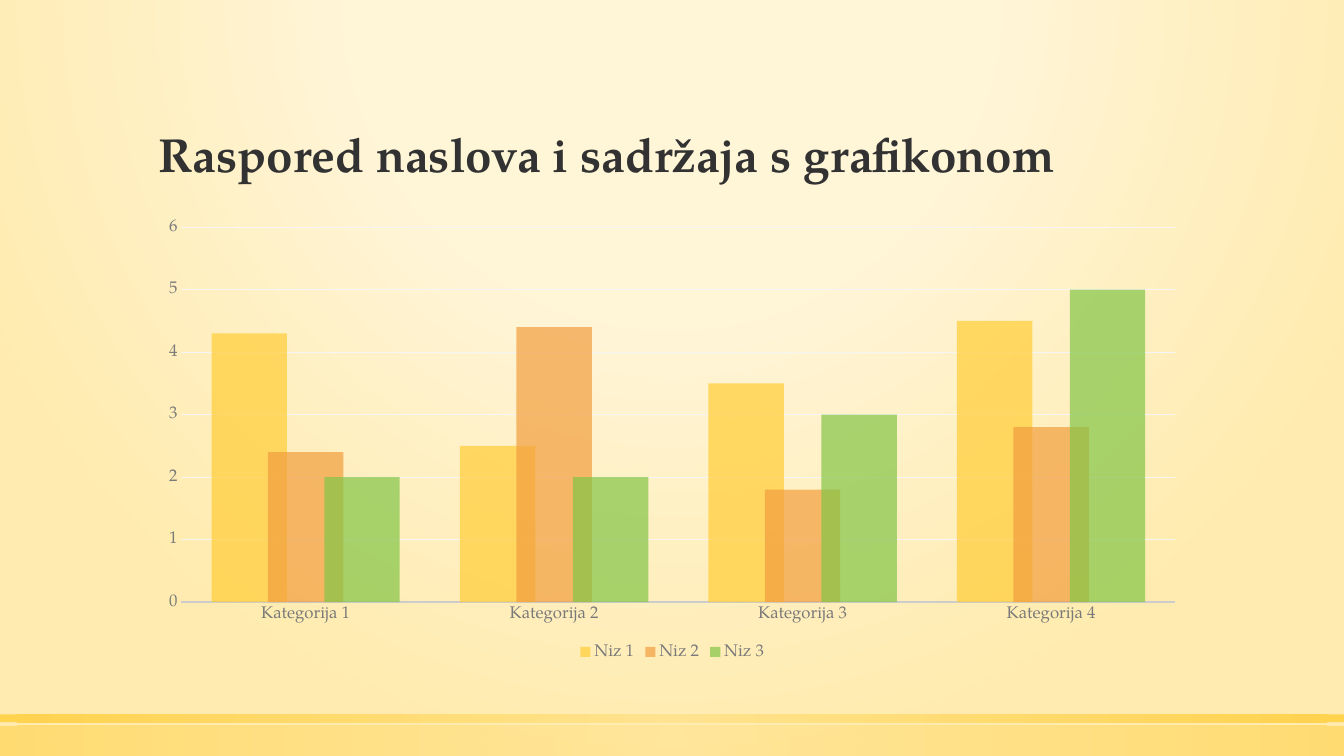
from pptx import Presentation
from pptx.chart.data import CategoryChartData
from pptx.dml.color import RGBColor
from pptx.enum.chart import XL_CHART_TYPE, XL_LEGEND_POSITION, XL_TICK_MARK
from pptx.enum.shapes import MSO_SHAPE
from pptx.enum.text import MSO_ANCHOR, MSO_AUTO_SIZE, PP_ALIGN
from pptx.oxml import parse_xml
from pptx.oxml.ns import nsdecls, qn
from pptx.util import Cm, Pt

FONT = "TeX Gyre Pagella"
SLIDE_WIDTH, SLIDE_HEIGHT = Cm(33.87), Cm(19.05)
MARGIN, CONTENT_WIDTH = Cm(3.73), Cm(26.42)
COLORS = {
    "cream": "FFF5D7", "sand": "FFEBAF", "light_gold": "FFE186",
    "gold": "FFCD36", "orange": "F29E3E", "green": "83C546",
    "title": "323232", "label": "7A7A7A", "axis": "CCCCCC", "grid": "F5F5F5",
}
CATEGORIES = [f"Kategorija {number}" for number in range(1, 5)]
SERIES = [
    ("Niz 1", "gold", (4.3, 2.5, 3.5, 4.5)),
    ("Niz 2", "orange", (2.4, 4.4, 1.8, 2.8)),
    ("Niz 3", "green", (2, 2, 3, 5)),
]


def color(name):
    return RGBColor.from_string(COLORS[name])


def format_font(font, size, color_name, bold=False):
    font.name = FONT
    font.size = Pt(size)
    font.bold = bold
    font.color.rgb = color(color_name)


def fill_radially(owner, fill, stops, center=(50, 50, 50, 50)):
    """Give a circular gradient; stops are (position, colour, opacity) in percent."""
    fill.solid()
    solid = next(owner.element.iter(qn("a:solidFill")))
    stop_xml = "".join(
        f'<a:gs pos="{position * 1000}"><a:srgbClr val="{COLORS[name]}">'
        f'<a:alpha val="{opacity * 1000}"/></a:srgbClr></a:gs>'
        for position, name, opacity in stops
    )
    left, top, right, bottom = (percent * 1000 for percent in center)
    gradient = parse_xml(
        f'<a:gradFill {nsdecls("a")} rotWithShape="1"><a:gsLst>{stop_xml}</a:gsLst>'
        f'<a:path path="circle"><a:fillToRect l="{left}" t="{top}" '
        f'r="{right}" b="{bottom}"/></a:path></a:gradFill>'
    )
    solid.getparent().replace(solid, gradient)


def add_band(slide, top, height, opacity):
    band = slide.shapes.add_shape(MSO_SHAPE.RECTANGLE, 0, top, SLIDE_WIDTH, height)
    band.shadow.inherit = False
    fill_radially(band, band.fill, [(0, "light_gold", opacity), (100, "gold", opacity)])
    band.line.fill.background()


def write_text(shape, text, size, color_name, bold=False, anchor=MSO_ANCHOR.TOP,
               line_spacing=1.0):
    frame = shape.text_frame
    frame.text = text
    frame.word_wrap = True
    frame.auto_size = MSO_AUTO_SIZE.NONE
    frame.vertical_anchor = anchor
    paragraph = frame.paragraphs[0]
    paragraph.alignment = PP_ALIGN.LEFT
    paragraph.line_spacing = line_spacing
    format_font(paragraph.runs[0].font, size, color_name, bold)


def add_title(slide, text):
    title = slide.shapes.title
    title.left, title.top = MARGIN, Cm(1.3)
    title.width, title.height = CONTENT_WIDTH, Cm(3.43)
    write_text(title, text, size=34, color_name="title", bold=True,
               anchor=MSO_ANCHOR.BOTTOM, line_spacing=0.9)


def format_axes(chart):
    for axis in (chart.category_axis, chart.value_axis):
        axis.major_tick_mark = axis.minor_tick_mark = XL_TICK_MARK.NONE
        format_font(axis.tick_labels.font, 12, "label")
    category_line = chart.category_axis.format.line
    category_line.color.rgb = color("axis")
    category_line.width = Pt(1.25)
    value_axis = chart.value_axis
    value_axis.minimum_scale, value_axis.maximum_scale = 0, 6
    value_axis.major_unit = 1
    value_axis.format.line.fill.background()
    grid_line = value_axis.major_gridlines.format.line
    grid_line.color.rgb = color("grid")
    grid_line.width = Pt(0.75)


def fill_series(series, color_name, opacity):
    series.format.fill.solid()
    series.format.fill.fore_color.rgb = color(color_name)
    rgb = next(series.format.element.iter(qn("a:srgbClr"))) if hasattr(
        series.format, "element") else next(series._element.iter(qn("a:srgbClr")))
    rgb.append(parse_xml(f'<a:alpha {nsdecls("a")} val="{opacity * 1000}"/>'))


def add_column_chart(slide):
    data = CategoryChartData()
    data.categories = CATEGORIES
    for name, _, values in SERIES:
        data.add_series(name, values)
    chart = slide.shapes.add_chart(
        XL_CHART_TYPE.COLUMN_CLUSTERED, MARGIN, Cm(5.28), CONTENT_WIDTH, Cm(11.46), data
    ).chart
    chart.has_title = False
    format_font(chart.font, 10, "title")
    format_axes(chart)
    plot = chart.plots[0]
    plot.gap_width, plot.overlap = 80, 25
    plot.vary_by_categories = False
    for series, (_, color_name, _) in zip(plot.series, SERIES):
        fill_series(series, color_name, opacity=70)
    chart.has_legend = True
    chart.legend.position = XL_LEGEND_POSITION.BOTTOM
    chart.legend.include_in_layout = False
    format_font(chart.legend.font, 12, "label")


def main():
    presentation = Presentation()
    presentation.slide_width, presentation.slide_height = SLIDE_WIDTH, SLIDE_HEIGHT
    slide = presentation.slides.add_slide(presentation.slide_layouts[5])
    fill_radially(
        slide, slide.background.fill,
        [(0, "cream", 59), (40, "cream", 66), (100, "sand", 100)],
        center=(50, -80, 50, 180),
    )
    add_band(slide, Cm(18.29), Cm(0.76), opacity=50)
    add_band(slide, Cm(18), Cm(0.2), opacity=80)
    add_title(slide, "Raspored naslova i sadržaja s grafikonom")
    add_column_chart(slide)
    presentation.save("out.pptx")


if __name__ == "__main__":
    main()
